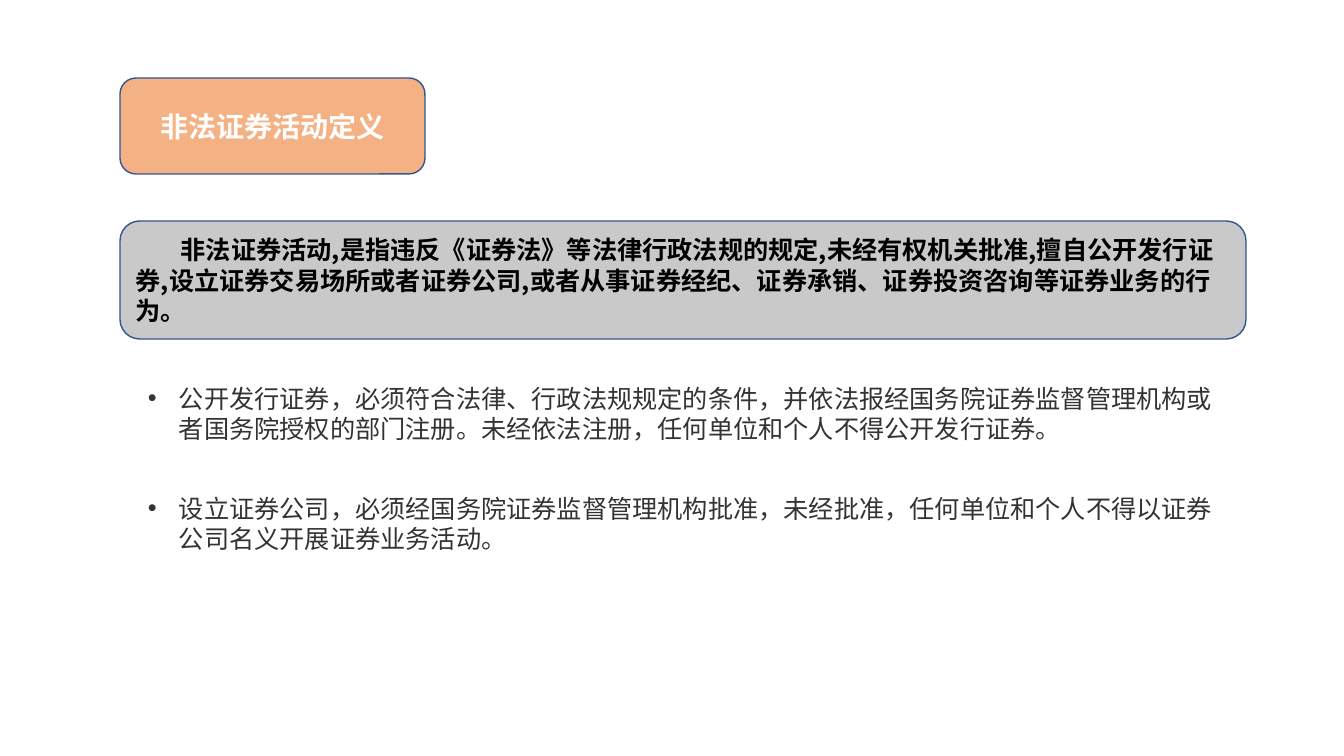
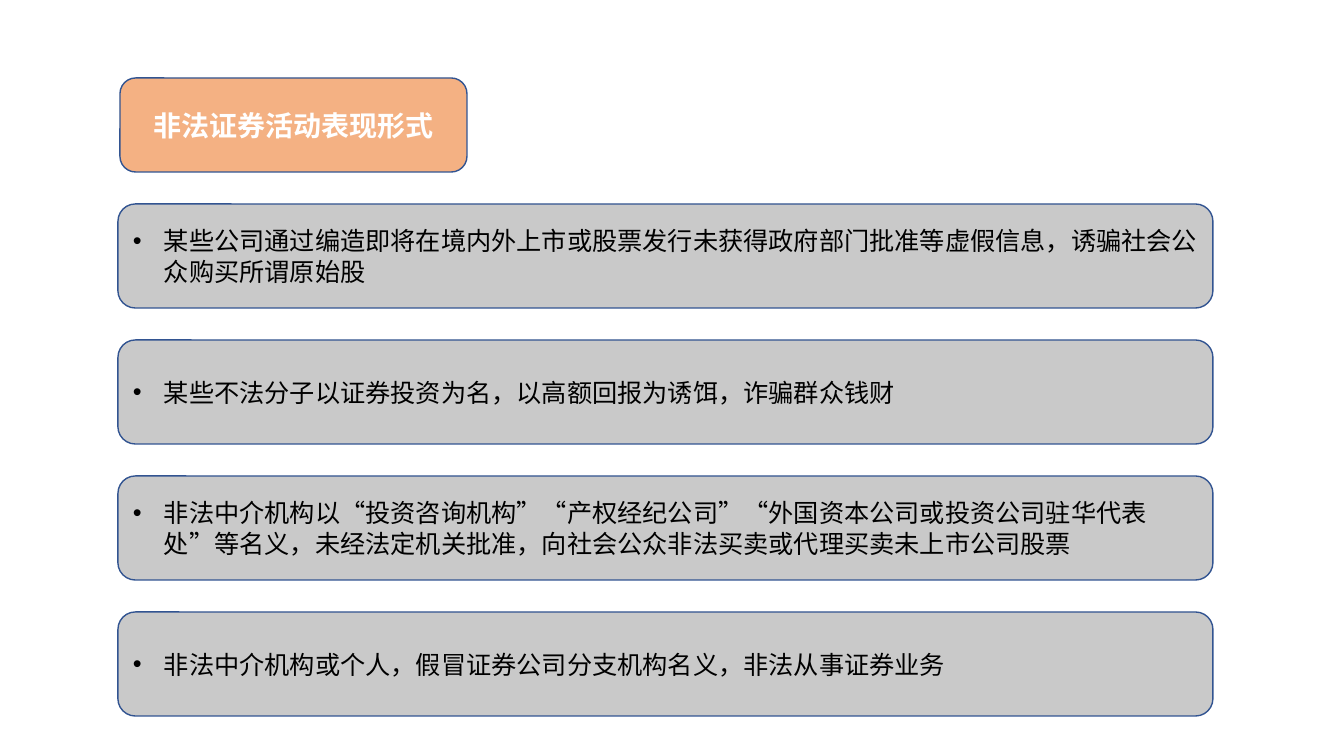
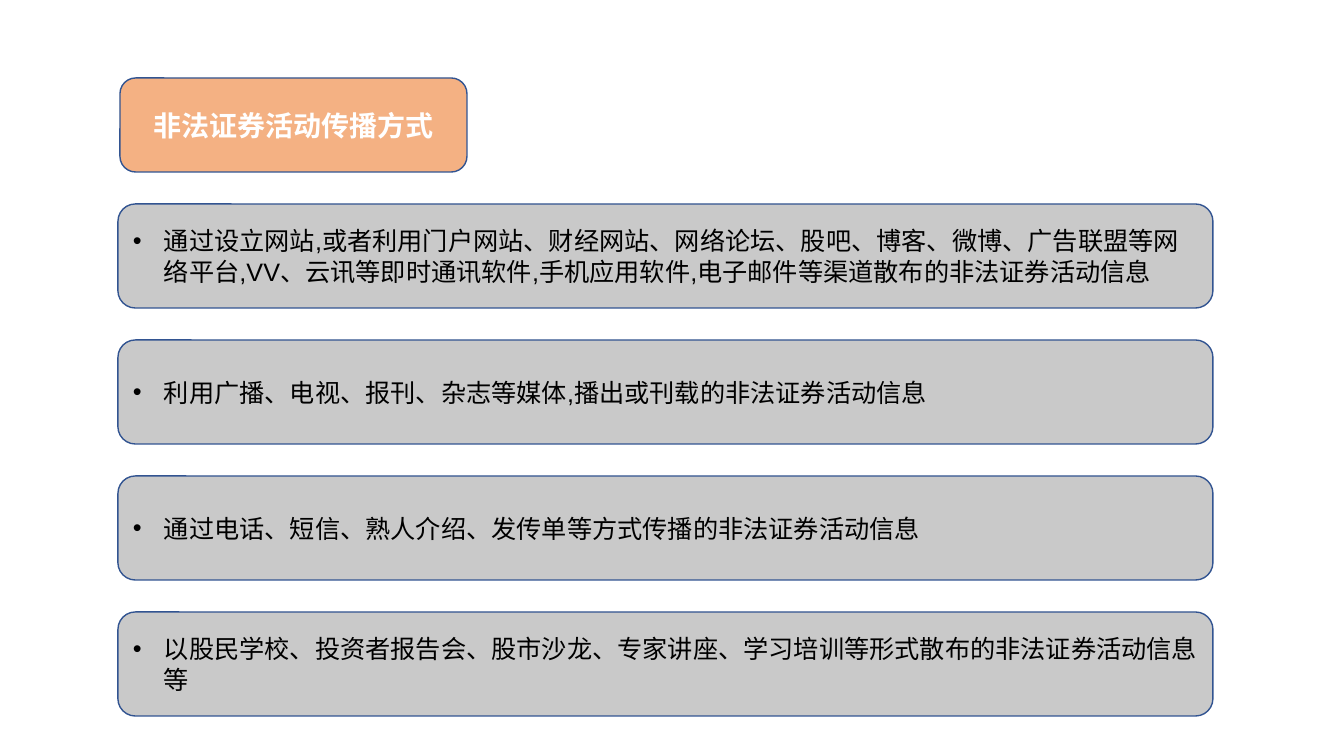
from lxml import etree
from pptx import Presentation
from pptx.dml.color import RGBColor
from pptx.enum.lang import MSO_LANGUAGE_ID
from pptx.enum.shapes import MSO_SHAPE
from pptx.enum.text import MSO_ANCHOR, MSO_AUTO_SIZE, PP_ALIGN
from pptx.oxml.ns import qn
from pptx.util import Emu, Pt

ROUNDED = MSO_SHAPE.ROUNDED_RECTANGLE
MIDDLE = MSO_ANCHOR.MIDDLE
LEFT, CENTER = PP_ALIGN.LEFT, PP_ALIGN.CENTER
GROW = MSO_AUTO_SIZE.SHAPE_TO_FIT_TEXT
CHINESE = MSO_LANGUAGE_ID.SIMPLIFIED_CHINESE

PAGE_W, PAGE_H = 1344, 756
EMU_PER_PX = 12192000 / PAGE_W

ORANGE = RGBColor(0xF4, 0xB1, 0x83)
GRAY = RGBColor(0xC9, 0xC9, 0xC9)
OUTLINE = RGBColor(0x32, 0x54, 0x91)
WHITE = RGBColor(0xFF, 0xFF, 0xFF)
BLACK = RGBColor(0x00, 0x00, 0x00)
DARK = RGBColor(0x33, 0x33, 0x33)

CJK_FONT = "Noto Sans CJK SC"
LATIN_FONT = "Arial"
TITLE_SIZE, BODY_SIZE = 20, 18
BULLET_INDENT, FIRST_LINE_INDENT = 31, 45

DEFINITION_TITLE = "非法证券活动定义"
DEFINITION = (
    "非法证券活动,是指违反《证券法》等法律行政法规的规定,未经有权机关批准,"
    "擅自公开发行证券,设立证券交易场所或者证券公司,或者从事证券经纪、证券承销、"
    "证券投资咨询等证券业务的行为。"
)
RULES = [
    "公开发行证券，必须符合法律、行政法规规定的条件，并依法报经国务院证券监督管理机构"
    "或者国务院授权的部门注册。未经依法注册，任何单位和个人不得公开发行证券。",
    "设立证券公司，必须经国务院证券监督管理机构批准，未经批准，任何单位和个人不得以"
    "证券公司名义开展证券业务活动。",
]
FORMS_TITLE = "非法证券活动表现形式"
FORMS = [
    "某些公司通过编造即将在境内外上市或股票发行未获得政府部门批准等虚假信息，"
    "诱骗社会公众购买所谓原始股",
    "某些不法分子以证券投资为名，以高额回报为诱饵，诈骗群众钱财",
    "非法中介机构以“投资咨询机构”“产权经纪公司”“外国资本公司或投资公司驻华代表处”"
    "等名义，未经法定机关批准，向社会公众非法买卖或代理买卖未上市公司股票",
    "非法中介机构或个人，假冒证券公司分支机构名义，非法从事证券业务",
]
CHANNELS_TITLE = "非法证券活动传播方式"
CHANNELS = [
    "通过设立网站,或者利用门户网站、财经网站、网络论坛、股吧、博客、微博、广告联盟等"
    "网络平台,VV、云讯等即时通讯软件,手机应用软件,电子邮件等渠道散布的非法证券活动信息",
    "利用广播、电视、报刊、杂志等媒体,播出或刊载的非法证券活动信息",
    "通过电话、短信、熟人介绍、发传单等方式传播的非法证券活动信息",
    "以股民学校、投资者报告会、股市沙龙、专家讲座、学习培训等形式散布的非法证券活动信息等",
]


def px(length):
    return Emu(round(length * EMU_PER_PX))


def write(shape, text, color, size=BODY_SIZE, font=CJK_FONT, bold=False, align=LEFT):
    shape.text_frame.word_wrap = True
    para = shape.text_frame.paragraphs[0]
    para.alignment = align
    span = para.add_run()
    span.text = text
    span.font.size = Pt(size)
    span.font.bold = bold
    span.font.name = font
    span.font.color.rgb = color
    span.font.language_id = CHINESE
    east_asian = etree.Element(qn("a:ea"), typeface=CJK_FONT)
    span.font._element.find(qn("a:latin")).addnext(east_asian)
    return para


def indent(para, margin, first_line):
    properties = para._p.get_or_add_pPr()
    properties.set("marL", str(px(margin)))
    properties.set("indent", str(px(first_line)))
    return properties


def add_bullet(para):
    properties = indent(para, BULLET_INDENT, -BULLET_INDENT)
    etree.SubElement(properties, qn("a:buFont"), typeface=LATIN_FONT)
    etree.SubElement(properties, qn("a:buChar"), char="•")


def add_panel(page, box, fill):
    panel = page.shapes.add_shape(ROUNDED, *map(px, box))
    panel.shadow.inherit = False
    panel.fill.solid()
    panel.fill.fore_color.rgb = fill
    panel.line.color.rgb = OUTLINE
    panel.line.width = Pt(1)
    panel.text_frame.vertical_anchor = MIDDLE
    return panel


def add_title(page, text, width, height):
    panel = add_panel(page, (120, 78, width, height), ORANGE)
    write(panel, text, WHITE, TITLE_SIZE, bold=True, align=CENTER)


def add_definition(page, box):
    para = write(add_panel(page, box, GRAY), DEFINITION, BLACK, bold=True)
    indent(para, 0, FIRST_LINE_INDENT)


def add_rules(page, box, pitch):
    left, top, width, height = box
    for index, text in enumerate(RULES):
        note = page.shapes.add_textbox(*map(px, (left, top + index * pitch, width, height)))
        note.text_frame.auto_size = GROW
        add_bullet(write(note, text, DARK))


def add_rows(page, texts, box, gap):
    left, top, width, height = box
    row_height = (height - gap * (len(texts) - 1)) // len(texts)
    for index, text in enumerate(texts):
        row_top = top + index * (row_height + gap)
        row = add_panel(page, (left, row_top, width, row_height), GRAY)
        add_bullet(write(row, text, BLACK, font=LATIN_FONT))


def build_definition_page(page):
    add_title(page, DEFINITION_TITLE, 305, 96)
    add_definition(page, (120, 221, 1126, 118))
    add_rules(page, (138, 378, 1086, 72), 110)


def build_list_page(page, title, texts):
    add_title(page, title, 347, 94)
    add_rows(page, texts, (118, 204, 1095, 512), 32)


def main():
    deck = Presentation()
    deck.slide_width, deck.slide_height = px(PAGE_W), px(PAGE_H)
    blank = deck.slide_layouts[6]
    build_definition_page(deck.slides.add_slide(blank))
    for title, texts in ((FORMS_TITLE, FORMS), (CHANNELS_TITLE, CHANNELS)):
        build_list_page(deck.slides.add_slide(blank), title, texts)
    deck.save("out.pptx")


if __name__ == "__main__":
    main()
